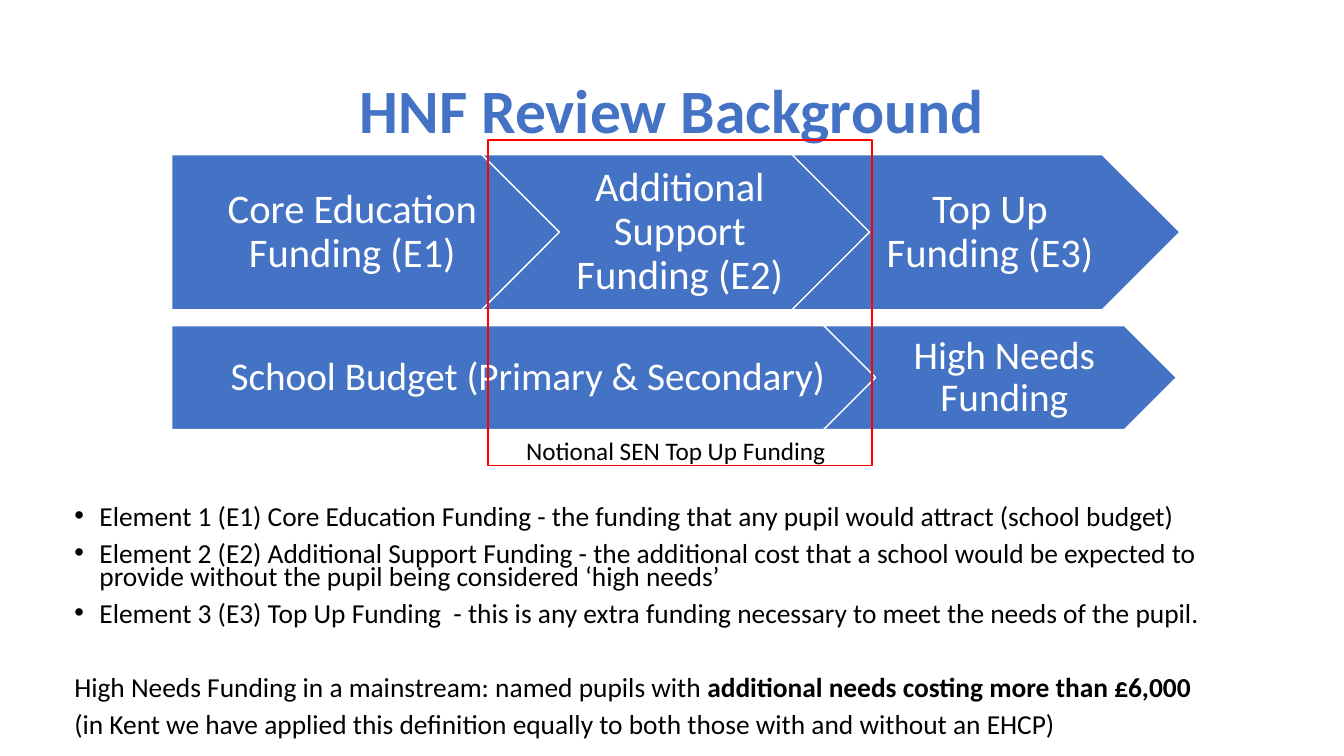
import pptx
import pptx.dml.color
import pptx.enum.shapes
import pptx.enum.text
import pptx.oxml
import pptx.oxml.ns
import pptx.util

Pt = pptx.util.Pt
SHAPE = pptx.enum.shapes.MSO_SHAPE
ALIGN = pptx.enum.text.PP_ALIGN
ANCHOR = pptx.enum.text.MSO_ANCHOR

FONT = "Calibri"
COLORS = {"blue": "4472C4", "white": "FFFFFF", "black": "000000", "red": "FF0000"}

ELEMENTS = [
    "Element 1 (E1) Core Education Funding - the funding that any pupil would attract (school budget)",
    "Element 2 (E2) Additional Support Funding - the additional cost that a school would be "
    "expected to provide without the pupil being considered ‘high needs’",
    "Element 3 (E3) Top Up Funding  - this is any extra funding necessary to meet the needs of the pupil.",
]


def rgb(name):
    return pptx.dml.color.RGBColor.from_string(COLORS[name])


def write(p, text, size, color="black", bold=False, align=ALIGN.LEFT, spacing=1.0, before=0):
    """Append a formatted run to a paragraph and set the paragraph's format."""
    p.alignment, p.line_spacing, p.space_before = align, spacing, Pt(before)
    r = p.add_run()
    r.text = text
    r.font.name, r.font.size, r.font.bold = FONT, Pt(size), bold
    r.font.color.rgb = rgb(color)


def add_bullet(p, indent):
    pPr = p._p.get_or_add_pPr()
    pPr.set("marL", str(Pt(indent)))
    pPr.set("indent", str(-Pt(indent)))
    for tag, attr, value in (("buFont", "typeface", "Arial"), ("buChar", "char", "•")):
        bu = pptx.oxml.parse_xml(f'<a:{tag} {pptx.oxml.ns.nsdecls("a")} {attr}="{value}"/>')
        pPr.append(bu)


def add_title(slide, x, y, w, h):
    sp = slide.shapes.title
    sp.left, sp.top, sp.width, sp.height = Pt(x), Pt(y), Pt(w), Pt(h)
    tf = sp.text_frame
    tf.vertical_anchor = ANCHOR.MIDDLE
    write(tf.paragraphs[0], "HNF Review Background", 44, "blue", True, ALIGN.CENTER, 0.9)


def add_arrow_row(slide, x, y, h, steps, overlap, size):
    """Draw (label, width) steps as a pentagon followed by chevrons."""
    for i, (label, w) in enumerate(steps):
        kind = SHAPE.CHEVRON if i else SHAPE.PENTAGON
        sp = slide.shapes.add_shape(kind, Pt(x), Pt(y), Pt(w), Pt(h))
        sp.shadow.inherit = False
        sp.fill.solid()
        sp.fill.fore_color.rgb = rgb("blue")
        sp.line.color.rgb = rgb("white")
        sp.line.width = Pt(1)
        tf = sp.text_frame
        tf.word_wrap = True
        tf.vertical_anchor = ANCHOR.MIDDLE
        tf.margin_left, tf.margin_right = Pt(9 if i else 12), Pt(3)
        tf.margin_top = tf.margin_bottom = Pt(6)
        write(tf.paragraphs[0], label, size, "white", align=ALIGN.CENTER, spacing=0.9)
        x += w - overlap


def add_notional_frame(slide, x, y, w, h):
    """Outline the notional funding area, with its caption at the bottom."""
    sp = slide.shapes.add_shape(SHAPE.RECTANGLE, Pt(x), Pt(y), Pt(w), Pt(h))
    sp.shadow.inherit = False
    sp.fill.background()
    sp.line.color.rgb = rgb("red")
    sp.line.width = Pt(1)
    caption = slide.shapes.add_textbox(Pt(x + 10), Pt(y + h - 25), Pt(w - 26), Pt(29))
    tf = caption.text_frame
    tf.word_wrap = True
    write(tf.paragraphs[0], "Notional SEN Top Up Funding", 18, align=ALIGN.CENTER)


def add_definitions(slide, x, y, w, h):
    tf = slide.shapes.add_textbox(Pt(x), Pt(y), Pt(w), Pt(h)).text_frame
    tf.word_wrap = True
    style = dict(size=19.6, spacing=0.7, before=10)
    for i, text in enumerate(ELEMENTS):
        p = tf.add_paragraph() if i else tf.paragraphs[0]
        write(p, text, **style)
        add_bullet(p, 18)
    p = tf.add_paragraph()
    wide = {**style, "before": 36.7}
    write(p, "High Needs Funding in a mainstream: named pupils with ", **wide)
    write(p, "additional needs costing more than £6,000", bold=True, **wide)
    write(tf.add_paragraph(),
          "(in Kent we have applied this definition equally to both those with and without an EHCP)",
          **style)


def main():
    prs = pptx.Presentation()
    prs.slide_width, prs.slide_height = Pt(960), Pt(540)
    slide = prs.slides.add_slide(prs.slide_layouts[5])
    add_title(slide, 66, 28.8, 828, 104.4)
    add_definitions(slide, 46, 359.3, 867, 180.7)
    funding = ["Core Education Funding (E1)", "Additional Support Funding (E2)", "Top Up Funding (E3)"]
    add_arrow_row(slide, 122.6, 110.4, 110.8, [(label, 277) for label in funding], 55.4, 29)
    budgets = [("School Budget (Primary & Secondary)", 518.4), ("High Needs Funding", 252)]
    add_arrow_row(slide, 122.6, 232.6, 74.2, budgets, 52.6, 28)
    add_notional_frame(slide, 348.5, 100.1, 274.3, 232.6)
    prs.save("out.pptx")


if __name__ == "__main__":
    main()
